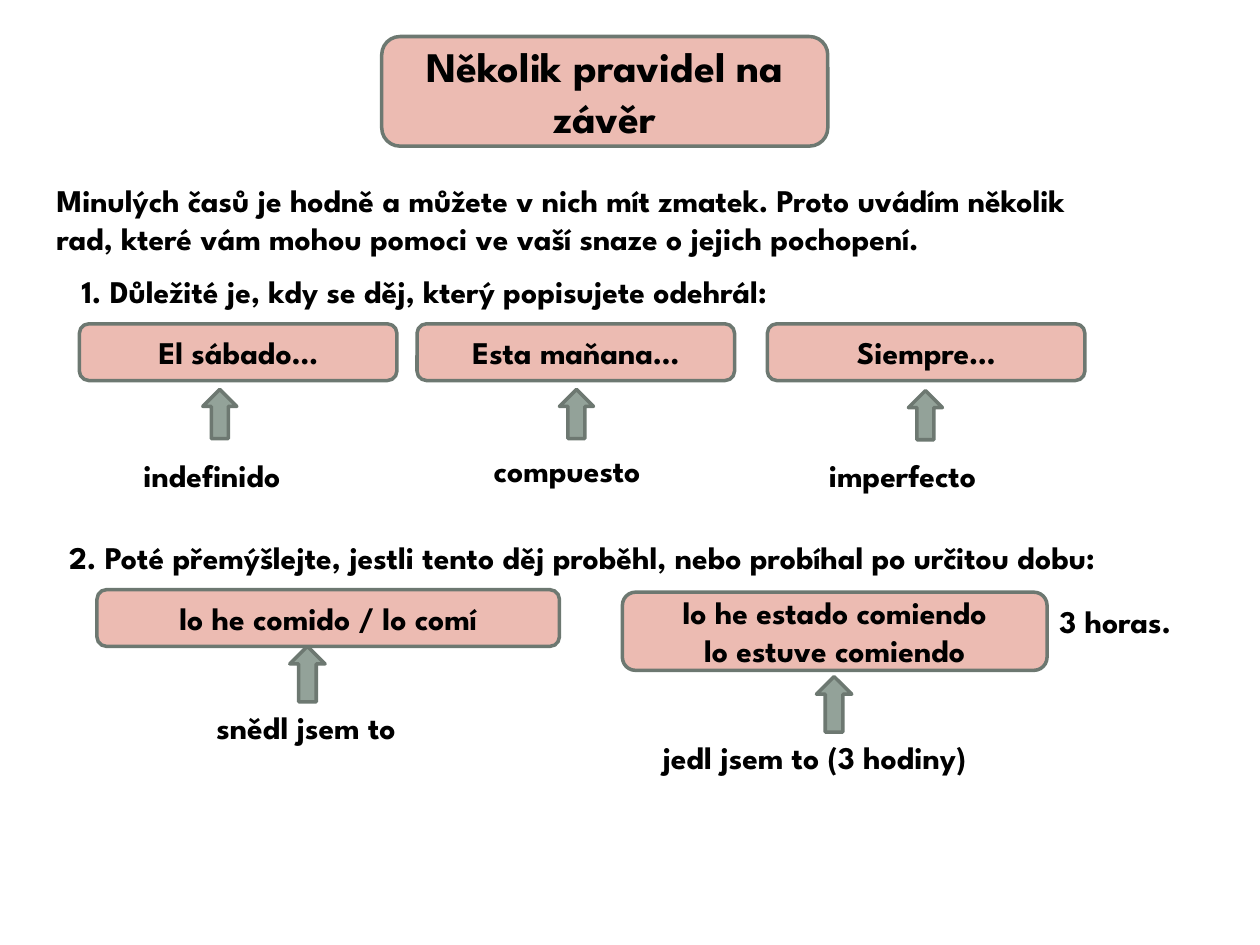
from pptx import Presentation
from pptx.dml.color import RGBColor
from pptx.enum.shapes import MSO_SHAPE
from pptx.enum.text import MSO_ANCHOR, MSO_AUTO_SIZE, PP_ALIGN
from pptx.util import Inches, Pt

ROUND, ARROW = MSO_SHAPE.ROUNDED_RECTANGLE, MSO_SHAPE.UP_ARROW
MIDDLE, FIT = MSO_ANCHOR.MIDDLE, MSO_AUTO_SIZE.SHAPE_TO_FIT_TEXT
LEFT, CENTER = PP_ALIGN.LEFT, PP_ALIGN.CENTER

THEME = {
    "box": RGBColor(0xEC, 0xBB, 0xB2),
    "arrow": RGBColor(0x93, 0xA2, 0x99),
    "edge": RGBColor(0x6D, 0x78, 0x71),
    "width": Pt(2),
    "title": Pt(24),
    "body": Pt(18),
    "text": {"name": "League Spartan", "bold": True},
    "ink": RGBColor(0, 0, 0),
}

# Content: lines of text with left, top, width, height
TITLE = (["Několik pravidel na závěr"], (3.03, 0.29, 3.54, 0.87))
NOTES = [
    (["Minulých časů je hodně a můžete v nich mít zmatek. Proto uvádím několik",
      "rad, které vám mohou pomoci ve vaší snaze o jejich pochopení."],
     (0.35, 1.39, 9.35, 0.71)),
    (["1. Důležité je, kdy se děj, který popisujete odehrál:"],
     (0.55, 2.11, 6.34, 0.4)),
    (["2. Poté přemýšlejte, jestli tento děj proběhl, nebo probíhal po určitou dobu:"],
     (0.45, 4.22, 9.26, 0.4)),
    (["3 horas."], (8.31, 4.73, 1.15, 0.4)),
]
# Example box, arrow below it, label below the arrow
RULES = [
    (["El sábado…"], (0.63, 2.57, 2.52, 0.45), (1.61, 3.09, 0.27, 0.39),
     ["indefinido"], (1.04, 3.57, 1.41, 0.4)),
    (["Esta maňana…"], (3.31, 2.57, 2.52, 0.45), (4.44, 3.09, 0.27, 0.39),
     ["compuesto"], (3.82, 3.53, 1.59, 0.4)),
    (["Siempre…"], (6.09, 2.57, 2.52, 0.45), (7.21, 3.1, 0.27, 0.39),
     ["imperfecto"], (6.48, 3.57, 1.54, 0.4)),
    (["lo he comido / lo comí"], (0.77, 4.68, 3.67, 0.45), (2.3, 5.13, 0.28, 0.44),
     ["snědl jsem to"], (1.62, 5.57, 1.8, 0.4)),
    (["lo he estado comiendo", "lo estuve comiendo"], (4.94, 4.7, 3.37, 0.62),
     (6.48, 5.37, 0.28, 0.44),
     ["jedl jsem to (3 hodiny)"], (5.16, 5.81, 2.92, 0.4)),
]


def style(item, values):
    for name, value in values.items():
        setattr(item, name, value)


def write(frame, lines, size, align):
    for i, line in enumerate(lines):
        para = frame.add_paragraph() if i else frame.paragraphs[0]
        para.alignment = align
        run = para.add_run()
        run.text = line
        style(run.font, {**THEME["text"], "size": size})
        run.font.color.rgb = THEME["ink"]


def draw(slide, kind, spot, fill):
    shape = slide.shapes.add_shape(kind, *map(Inches, spot))
    shape.shadow.inherit = False
    shape.fill.solid()
    shape.fill.fore_color.rgb = fill
    shape.line.color.rgb = THEME["edge"]
    shape.line.width = THEME["width"]
    return shape


def box(slide, lines, spot, size):
    frame = draw(slide, ROUND, spot, THEME["box"]).text_frame
    style(frame, {"word_wrap": True, "vertical_anchor": MIDDLE})
    write(frame, lines, size, CENTER)


def label(slide, lines, spot):
    frame = slide.shapes.add_textbox(*map(Inches, spot)).text_frame
    style(frame, {"word_wrap": False, "auto_size": FIT})
    write(frame, lines, THEME["body"], LEFT)


def main():
    deck = Presentation()
    style(deck, {"slide_width": Inches(10), "slide_height": Inches(7.5)})
    slide = deck.slides.add_slide(deck.slide_layouts[6])

    # Title and explanations
    box(slide, *TITLE, THEME["title"])
    for lines, spot in NOTES:
        label(slide, lines, spot)

    # Examples with their tenses or meanings
    for lines, spot, arrow, sense, place in RULES:
        box(slide, lines, spot, THEME["body"])
        draw(slide, ARROW, arrow, THEME["arrow"])
        label(slide, sense, place)

    deck.save("out.pptx")


if __name__ == "__main__":
    main()
